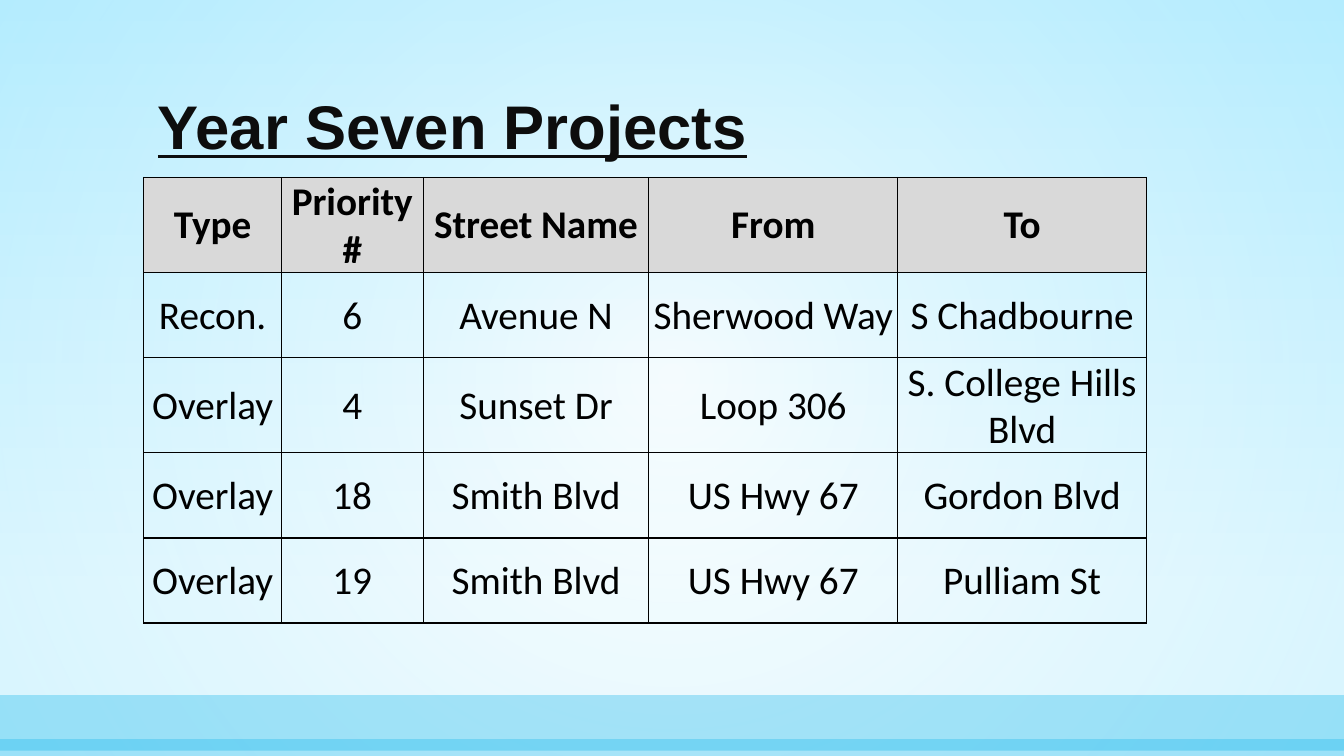
from lxml.etree import SubElement
from pptx import Presentation
from pptx.dml.color import RGBColor
from pptx.enum.shapes import MSO_SHAPE as Shape
from pptx.enum.text import MSO_ANCHOR as Anchor, PP_ALIGN as Align
from pptx.oxml.ns import qn
from pptx.util import Emu, Pt

PX = 9525  # 96 px to the inch
WIDTH, HEIGHT = 1280, 720

BLACK = RGBColor(0x00, 0x00, 0x00)
WHITE = RGBColor(0xFF, 0xFF, 0xFF)
INK = RGBColor(0x0D, 0x0D, 0x0D)
HEADER_GREY = RGBColor(0xD9, 0xD9, 0xD9)
PALE_SKY = RGBColor(0xC8, 0xF1, 0xFF)
SKY = RGBColor(0x91, 0xE4, 0xFF)
BAND_BLUE = RGBColor(0x00, 0xB0, 0xEA)

COLUMN_WIDTHS = [131, 135, 215, 237, 237]
ROW_HEIGHT = 81
PROJECTS = [
    ["Type", "Priority #", "Street Name", "From", "To"],
    ["Recon.", "6", "Avenue N", "Sherwood Way", "S Chadbourne"],
    ["Overlay", "4", "Sunset Dr", "Loop 306", "S. College Hills Blvd"],
    ["Overlay", "18", "Smith Blvd", "US Hwy 67", "Gordon Blvd"],
    ["Overlay", "19", "Smith Blvd", "US Hwy 67", "Pulliam St"],
]


def px(*lengths):
    return [Emu(length * PX) for length in lengths]


def write(frame, text, *, font, size, color, bold=False, underline=False,
          align=Align.LEFT, spacing=1.0):
    paragraph = frame.paragraphs[0]
    paragraph.alignment = align
    paragraph.line_spacing = spacing
    run = paragraph.add_run()
    run.text = text
    run.font.name = font
    run.font.size = Pt(size)
    run.font.color.rgb = color
    run.font.bold = bold
    run.font.underline = underline


def set_gradient(fill, *stops):
    fill.gradient()
    fill.gradient_angle = 270
    for stop, (position, color) in zip(fill.gradient_stops, stops):
        stop.position = position
        stop.color.rgb = color


def set_opacity(shape, *percents):
    colors = shape.element.spPr.iter(qn("a:srgbClr"))
    for color, percent in zip(colors, percents):
        SubElement(color, qn("a:alpha"), val=str(percent * 1000))


def add_plain_rectangle(slide, box):
    rectangle = slide.shapes.add_shape(Shape.RECTANGLE, *px(*box))
    rectangle.shadow.inherit = False
    rectangle.line.fill.background()
    return rectangle


def add_glow(slide, box):
    """Lay a radial gradient, clear in the middle and blue at the corners."""
    glow = add_plain_rectangle(slide, box)
    set_gradient(glow.fill, (0, WHITE), (1, SKY))
    set_opacity(glow, 49, 35)
    gradient = glow.element.spPr.find(qn("a:gradFill"))
    gradient.remove(gradient.find(qn("a:lin")))
    radial = SubElement(gradient, qn("a:path"), path="circle")
    SubElement(radial, qn("a:fillToRect"), l="50000", t="50000", r="50000", b="50000")


def add_backdrop(slide, box):
    left, top, width, height = box
    set_gradient(slide.background.fill, (0, PALE_SKY), (0.79, WHITE))
    add_glow(slide, box)
    for offset, band_height, opacity in [(662, 53, 30), (704, 16, 28)]:
        band = add_plain_rectangle(slide, (left, top + offset, width, band_height))
        band.fill.solid()
        band.fill.fore_color.rgb = BAND_BLUE
        set_opacity(band, opacity)


def add_title(slide, box):
    frame = slide.shapes.add_textbox(*px(*box)).text_frame
    frame.word_wrap = True
    frame.vertical_anchor = Anchor.BOTTOM
    write(frame, "Year Seven Projects", font="Arial", size=44, color=INK,
          bold=True, underline=True, spacing=0.9)


def add_borders(cell):
    properties = cell._tc.get_or_add_tcPr()
    for side in ("lnL", "lnR", "lnT", "lnB"):
        border = SubElement(properties, qn(f"a:{side}"), w=str(Pt(1)))
        line_fill = SubElement(border, qn("a:solidFill"))
        SubElement(line_fill, qn("a:srgbClr"), val=str(BLACK))


def format_cell(cell, text, is_header):
    cell.vertical_anchor = Anchor.MIDDLE
    cell.margin_left, cell.margin_top, cell.margin_right, cell.margin_bottom = px(1, 1, 1, 0)
    add_borders(cell)
    if is_header:
        cell.fill.solid()
        cell.fill.fore_color.rgb = HEADER_GREY
    else:
        cell.fill.background()
    write(cell.text_frame, text, font="Calibri", size=28, color=BLACK,
          bold=is_header, align=Align.CENTER)


def add_projects_table(slide, left, top):
    size = px(left, top, sum(COLUMN_WIDTHS), ROW_HEIGHT * len(PROJECTS))
    table = slide.shapes.add_table(len(PROJECTS), len(COLUMN_WIDTHS), *size).table
    table.horz_banding = False
    for column, width in zip(table.columns, px(*COLUMN_WIDTHS)):
        column.width = width
    for row_number, (row, project) in enumerate(zip(table.rows, PROJECTS)):
        for cell, text in zip(row.cells, project):
            format_cell(cell, text, is_header=row_number == 0)


def main():
    presentation = Presentation()
    presentation.slide_width, presentation.slide_height = px(WIDTH, HEIGHT)
    slide = presentation.slides.add_slide(presentation.slide_layouts[6])
    add_backdrop(slide, (0, 0, WIDTH, HEIGHT))
    add_title(slide, (141, 46, 998, 114))
    add_projects_table(slide, 137, 169)
    presentation.save("out.pptx")


if __name__ == "__main__":
    main()
